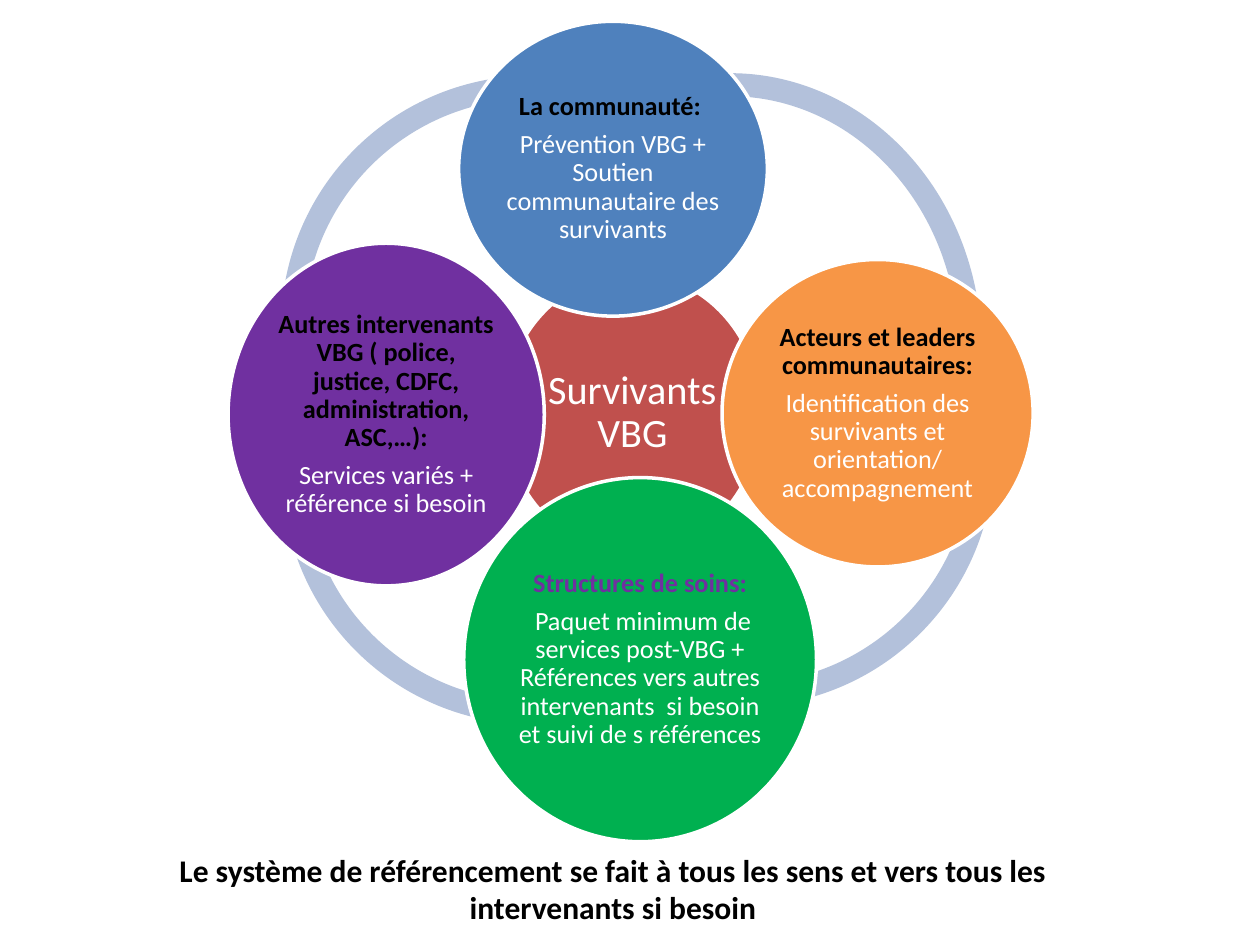
from dataclasses import dataclass

import pptx
import pptx.dml.color
import pptx.enum.shapes
import pptx.enum.text
import pptx.slide
import pptx.util

Pt = pptx.util.Pt
RGB = pptx.dml.color.RGBColor.from_string
SHAPE = pptx.enum.shapes.MSO_SHAPE
ANCHOR = pptx.enum.text.MSO_ANCHOR
CENTER = pptx.enum.text.PP_ALIGN.CENTER


@dataclass(frozen=True)
class Theme:
    font: str = "Calibri"
    white: str = "FFFFFF"
    black: str = "000000"
    ring: str = "B3C1DB"
    red: str = "C0504D"
    blue: str = "4F81BD"
    orange: str = "F79646"
    green: str = "00B050"
    purple: str = "7030A0"
    caption_size: float = 18
    hub_size: float = 23
    actor_size: float = 15
    outline: float = 2


@dataclass(frozen=True)
class Box:
    left: float
    top: float
    width: float
    height: float

    def lengths(self) -> list[pptx.util.Length]:
        return [Pt(v) for v in (self.left, self.top, self.width, self.height)]


@dataclass(frozen=True)
class Arc:
    box: Box
    start: float
    end: float


@dataclass(frozen=True)
class Para:
    text: str
    color: str
    bold: bool = False


@dataclass(frozen=True)
class Circle:
    box: Box
    fill: str
    size: float
    inset: float
    paras: tuple[Para, ...]


THEME = Theme()
RING_THICKNESS = 0.046
LEFT, UP, RIGHT, DOWN = 107.95, 159.38, 0.1, 52.89

ARCS = (
    Arc(Box(160.6, 43.2, 287.3, 287.3), LEFT, UP),
    Arc(Box(161.3, 126.7, 287.3, 287.3), DOWN, LEFT),
    Arc(Box(280.8, 116.6, 287.3, 287.3), 215.98, DOWN),
    Arc(Box(273.6, 41.8, 287.3, 315.4), UP, RIGHT),
)

CIRCLES = (
    Circle(Box(288, 156.2, 146.9, 159.8), THEME.red, THEME.hub_size, 2.2,
           (Para("Survivants VBG", THEME.white),)),
    Circle(Box(262.1, 12.2, 176.4, 168.5), THEME.blue, THEME.actor_size, 1.5,
           (Para("La communauté: ", THEME.black, True),
            Para("Prévention VBG + Soutien communautaire des survivants", THEME.white))),
    Circle(Box(412.6, 148.3, 177.8, 175.7), THEME.orange, THEME.actor_size, 1.5,
           (Para("Acteurs et leaders communautaires:", THEME.black, True),
            Para("Identification des survivants et orientation/ accompagnement", THEME.white))),
    Circle(Box(265, 272.9, 201.6, 208.1), THEME.green, THEME.actor_size, 1.5,
           (Para("Structures de soins:", THEME.purple, True),
            Para(" Paquet minimum de services post-VBG + Références vers autres "
                 "intervenants  si besoin et suivi de s références", THEME.white))),
    Circle(Box(130.3, 139, 180.7, 195.8), THEME.purple, THEME.actor_size, 1.5,
           (Para("Autres intervenants VBG ( police, justice, CDFC, "
                 "administration, ASC,…):", THEME.black, True),
            Para("Services variés + référence si besoin", THEME.white))),
)

CAPTION_BOX = Box(64.8, 482.4, 571, 44.6)
CAPTION = Para("Le système de référencement se fait à tous les sens et vers tous les "
               "intervenants si besoin", THEME.black, True)


def apply(target: object, values: dict[str, object]) -> None:
    for name, value in values.items():
        setattr(target, name, value)


def write(tf: pptx.text.text.TextFrame, paras: tuple[Para, ...], size: float,
          p_format: dict[str, object]) -> None:
    for i, para in enumerate(paras):
        p = tf.paragraphs[0] if i == 0 else tf.add_paragraph()
        apply(p, {"alignment": CENTER, **p_format})
        r = p.add_run()
        r.text = para.text
        apply(r.font, {"name": THEME.font, "size": Pt(size), "bold": para.bold})
        r.font.color.rgb = RGB(para.color)


def add_shape(s: pptx.slide.Slide, kind: SHAPE, box: Box,
              fill: str) -> pptx.shapes.autoshape.Shape:
    sp = s.shapes.add_shape(kind, *box.lengths())
    sp.shadow.inherit = False
    sp.fill.solid()
    sp.fill.fore_color.rgb = RGB(fill)
    return sp


def add_arc(s: pptx.slide.Slide, arc: Arc) -> None:
    sp = add_shape(s, SHAPE.BLOCK_ARC, arc.box, THEME.ring)
    sp.line.fill.background()
    for i, value in enumerate((arc.start, arc.end, RING_THICKNESS)):
        sp.adjustments[i] = value


def add_circle(s: pptx.slide.Slide, circle: Circle) -> None:
    sp = add_shape(s, SHAPE.OVAL, circle.box, circle.fill)
    sp.line.color.rgb = RGB(THEME.white)
    sp.line.width = Pt(THEME.outline)
    tf = sp.text_frame
    margins = {f"margin_{side}": Pt(circle.inset) for side in ("left", "top", "right", "bottom")}
    apply(tf, {"word_wrap": True, "vertical_anchor": ANCHOR.MIDDLE, **margins})
    write(tf, circle.paras, circle.size,
          {"line_spacing": 0.9, "space_before": Pt(0), "space_after": Pt(circle.size * 0.35)})


def fill_caption(s: pptx.slide.Slide) -> None:
    title = s.shapes.title.element
    title.getparent().remove(title)
    sp = s.placeholders[1]
    apply(sp, dict(zip(("left", "top", "width", "height"), CAPTION_BOX.lengths())))
    apply(sp.text_frame, {"word_wrap": True, "vertical_anchor": ANCHOR.TOP})
    write(sp.text_frame, (CAPTION,), THEME.caption_size, {"space_before": Pt(0)})


def main() -> None:
    prs = pptx.Presentation()
    apply(prs, {"slide_width": Pt(720), "slide_height": Pt(540)})
    s = prs.slides.add_slide(prs.slide_layouts.get_by_name("Section Header"))
    fill_caption(s)
    for arc in ARCS:
        add_arc(s, arc)
    for circle in CIRCLES:
        add_circle(s, circle)
    prs.save("out.pptx")


if __name__ == "__main__":
    main()
